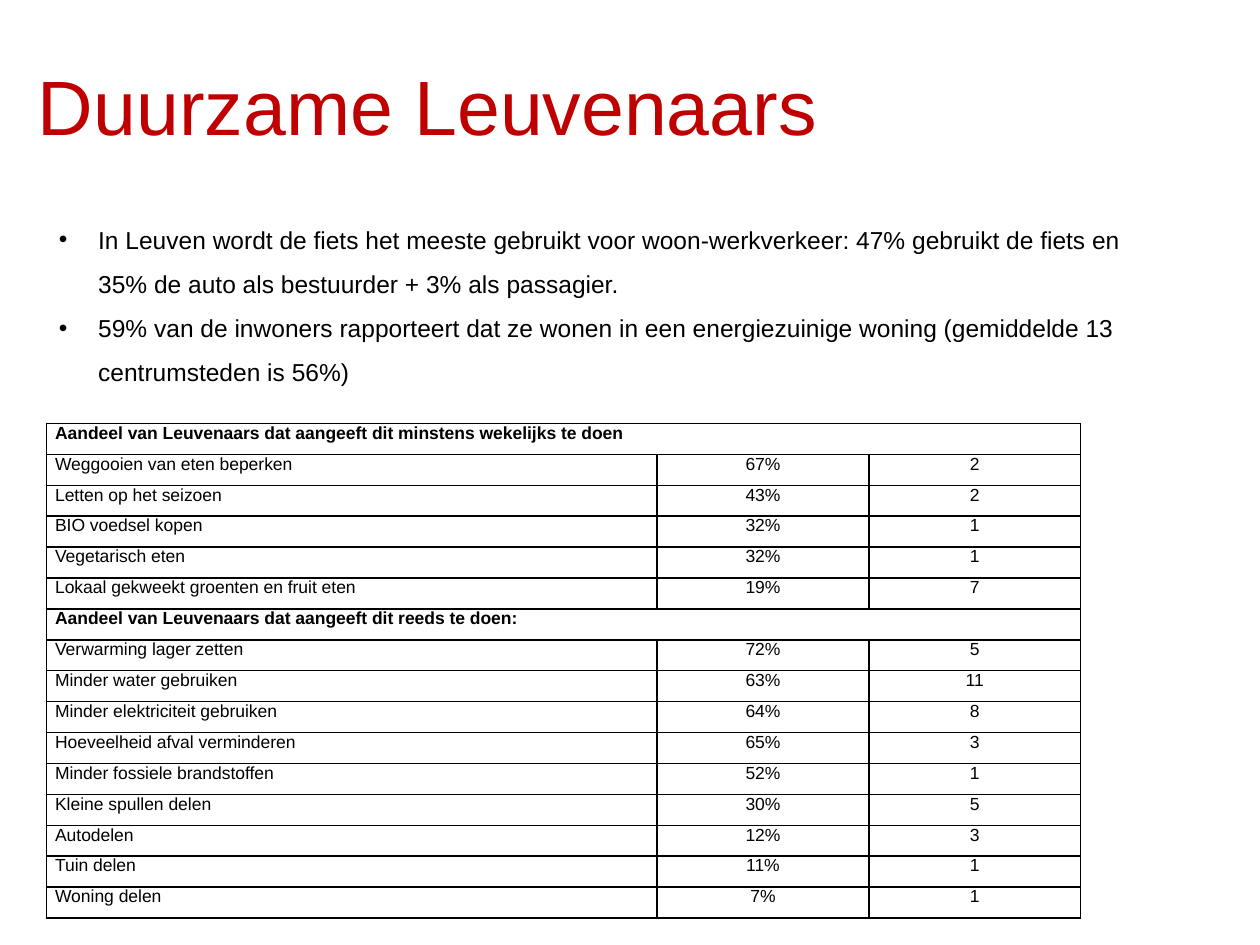
from lxml import etree
from pptx import Presentation
from pptx.dml.color import RGBColor
from pptx.enum.text import MSO_ANCHOR, MSO_AUTO_SIZE, PP_ALIGN
from pptx.oxml.ns import qn
from pptx.util import Pt

LEFT, CENTER = PP_ALIGN.LEFT, PP_ALIGN.CENTER
MIDDLE = MSO_ANCHOR.MIDDLE
NO_FIT, GROW = MSO_AUTO_SIZE.NONE, MSO_AUTO_SIZE.SHAPE_TO_FIT_TEXT

BLACK = RGBColor(0x00, 0x00, 0x00)
RED = RGBColor(0xC0, 0x00, 0x00)

TITLE = "Duurzame Leuvenaars"
POINTS = [
    "In Leuven wordt de fiets het meeste gebruikt voor woon-werkverkeer: "
    "47% gebruikt de fiets en 35% de auto als bestuurder + 3% als passagier.",
    "59% van de inwoners rapporteert dat ze wonen in een energiezuinige "
    "woning (gemiddelde 13 centrumsteden is 56%)",
]
# A row with a single entry is a heading over the full width
ROWS = [
    ("Aandeel van Leuvenaars dat aangeeft dit minstens wekelijks te doen",),
    ("Weggooien van eten beperken", "67%", "2"),
    ("Letten op het seizoen", "43%", "2"),
    ("BIO voedsel kopen", "32%", "1"),
    ("Vegetarisch eten", "32%", "1"),
    ("Lokaal gekweekt groenten en fruit eten", "19%", "7"),
    ("Aandeel van Leuvenaars dat aangeeft dit reeds te doen:",),
    ("Verwarming lager zetten", "72%", "5"),
    ("Minder water gebruiken", "63%", "11"),
    ("Minder elektriciteit gebruiken", "64%", "8"),
    ("Hoeveelheid afval verminderen", "65%", "3"),
    ("Minder fossiele brandstoffen", "52%", "1"),
    ("Kleine spullen delen", "30%", "5"),
    ("Autodelen", "12%", "3"),
    ("Tuin delen", "11%", "1"),
    ("Woning delen", "7%", "1"),
]
COLS = (349, 121, 121)


def assign(item, values):
    for name, value in values.items():
        setattr(item, name, value)


def write(para, text, size, color=BLACK, bold=False, align=LEFT):
    para.alignment = align
    run = para.add_run()
    run.text = text
    assign(run.font, {"name": "Arial", "size": Pt(size), "bold": bold})
    run.font.color.rgb = color


def add_title(slide, left, top, width, height):
    title = slide.shapes.title
    assign(title, {"left": Pt(left), "top": Pt(top),
                   "width": Pt(width), "height": Pt(height)})
    frame = title.text_frame
    assign(frame, {"word_wrap": True, "auto_size": NO_FIT,
                   "vertical_anchor": MIDDLE})
    write(frame.paragraphs[0], TITLE, 44, RED)


def add_points(slide, left, top, width, height):
    box = slide.shapes.add_textbox(Pt(left), Pt(top), Pt(width), Pt(height))
    frame = box.text_frame
    assign(frame, {"word_wrap": True, "auto_size": GROW})
    for i, text in enumerate(POINTS):
        para = frame.add_paragraph() if i else frame.paragraphs[0]
        write(para, text, 14)
        para.line_spacing = 1.5
        # Bullet with hanging indent
        props = para._p.get_or_add_pPr()
        props.set("marL", str(Pt(22.5)))
        props.set("indent", str(-Pt(22.5)))
        font = etree.SubElement(props, qn("a:buFont"))
        font.set("typeface", "Arial")
        etree.SubElement(props, qn("a:buChar")).set("char", "•")


def add_border(cell):
    props = cell._tc.get_or_add_tcPr()
    for side in ("lnL", "lnR", "lnT", "lnB"):
        line = etree.SubElement(props, qn(f"a:{side}"))
        line.set("w", str(Pt(1)))
        fill = etree.SubElement(line, qn("a:solidFill"))
        etree.SubElement(fill, qn("a:srgbClr")).set("val", str(BLACK))


def add_grid(slide, left, top, height):
    frame = slide.shapes.add_table(len(ROWS), len(COLS), Pt(left), Pt(top),
                                   Pt(sum(COLS)), Pt(height))
    table = frame.table
    assign(table, {"first_row": False, "horz_banding": False})
    for col, width in zip(table.columns, COLS):
        col.width = Pt(width)
    # Plain bordered cells
    for row in table.rows:
        row.height = Pt(height / len(ROWS))
        for cell in row.cells:
            assign(cell, {"margin_left": Pt(5), "margin_right": Pt(5),
                          "margin_top": 0, "margin_bottom": 0})
            add_border(cell)
            cell.fill.background()
            cell.text_frame.paragraphs[0].font.size = Pt(10)
    # Headings and values
    for r, entries in enumerate(ROWS):
        head = len(entries) == 1
        if head:
            table.cell(r, 0).merge(table.cell(r, len(COLS) - 1))
        for c, text in enumerate(entries):
            para = table.cell(r, c).text_frame.paragraphs[0]
            write(para, text, 10, bold=head, align=CENTER if c else LEFT)


def main():
    deck = Presentation()
    assign(deck, {"slide_width": Pt(720), "slide_height": Pt(540)})
    slide = deck.slides.add_slide(deck.slide_layouts[5])
    add_grid(slide, 26.5, 242, 283)
    add_title(slide, 14.5, 15, 648, 90)
    add_points(slide, 26.5, 116.5, 635, 109)
    deck.save("out.pptx")


if __name__ == "__main__":
    main()
